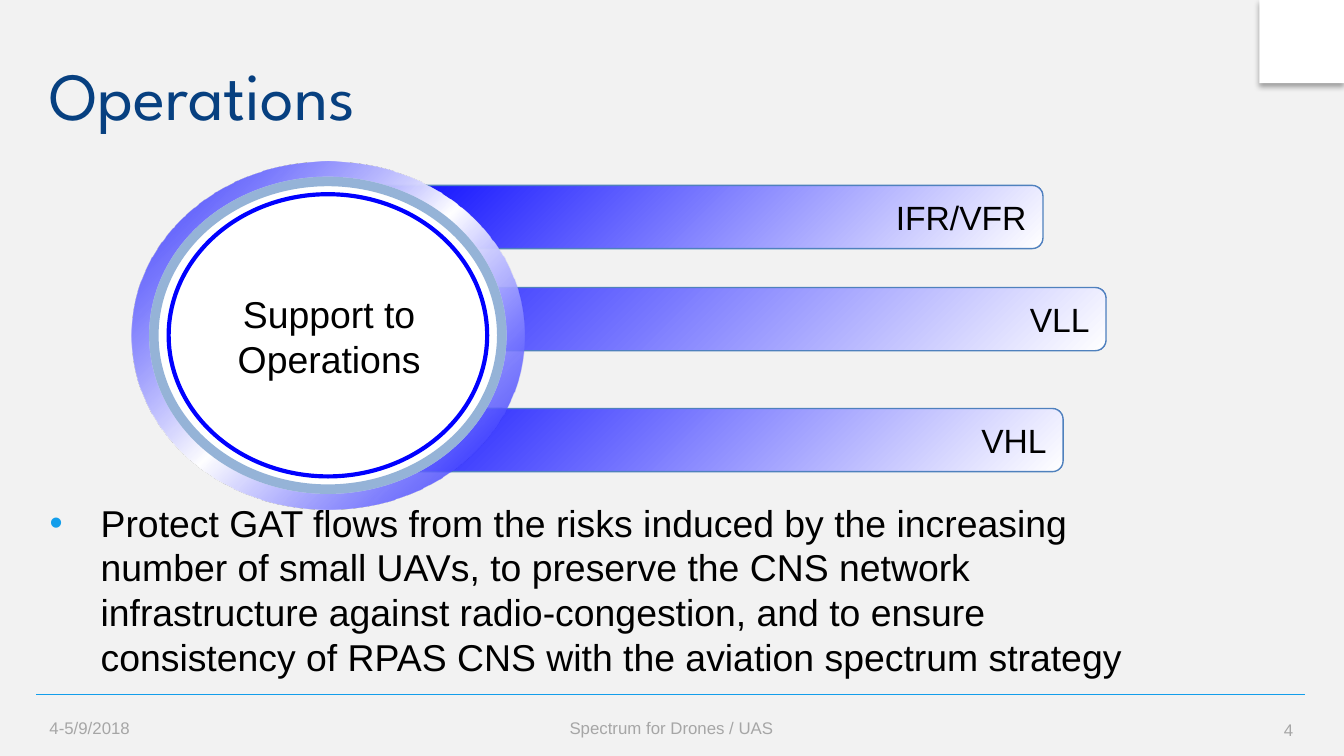
from lxml import etree
from pptx import Presentation
from pptx.dml.color import RGBColor
from pptx.enum.shapes import MSO_CONNECTOR as Connector, MSO_SHAPE as Shape
from pptx.enum.text import MSO_ANCHOR as Anchor, PP_ALIGN as Align
from pptx.oxml.ns import qn
from pptx.util import Inches, Pt

WIDTH = Inches(10)
HEIGHT = WIDTH * 9 // 16

BACKGROUND = RGBColor(0xF2, 0xF2, 0xF2)
WHITE = RGBColor(0xFF, 0xFF, 0xFF)
BLACK = RGBColor(0x00, 0x00, 0x00)
NAVY = RGBColor(0x07, 0x40, 0x80)
SKY = RGBColor(0x13, 0x9E, 0xEB)
GREY = RGBColor(0xA6, 0xA6, 0xA6)
BLUE = RGBColor(0x00, 0x00, 0xFF)
STEEL = RGBColor(0x4F, 0x81, 0xBD)

TITLE = {"size": Pt(36), "name": "League Spartan", "color": NAVY}
BODY = {"size": Pt(20), "name": "Arial", "color": BLACK}
BAR = {**BODY, "size": Pt(18)}
FOOTER = {**BODY, "size": Pt(9), "color": GREY}

CENTRE = (24.4, 44.36)
BAR_HEIGHT = 8.36
BARS = [  # label, left, top, width
    ("IFR/VFR", 26.4, 24.53, 51.2),
    ("VLL", 17.7, 38.04, 64.6),
    ("VHL", 22.4, 54.04, 56.7),
]


def place(left, top, width, height):
    """Turn percentages of the slide into lengths."""
    return [round(share * side / 100) for share, side in
            zip((left, top, width, height), (WIDTH, HEIGHT) * 2)]


def child(parent, tag, **attributes):
    element = etree.SubElement(parent, qn(tag))
    for name, value in attributes.items():
        element.set(name, str(value))
    return element


def add_color(parent, color, opacity=100):
    element = child(parent, "a:srgbClr", val=color)
    if opacity < 100:
        child(element, "a:alpha", val=opacity * 1000)


def set_gradient(shape, stops, angle=45):
    """Fill with stops of (position, colour, opacity)."""
    shape.fill.gradient()
    gradient = shape._element.spPr.find(qn("a:gradFill"))
    for element in list(gradient):
        gradient.remove(element)
    stop_list = child(gradient, "a:gsLst")
    for position, color, opacity in stops:
        add_color(child(stop_list, "a:gs", pos=position * 1000), color, opacity)
    child(gradient, "a:lin", ang=angle * 60000, scaled=0)


def write(shape, text, style, align=Align.LEFT, anchor=Anchor.MIDDLE,
          wrap=True, bullet=None):
    frame = shape.text_frame
    for name, value in {"word_wrap": wrap, "vertical_anchor": anchor}.items():
        setattr(frame, name, value)
    paragraph = frame.paragraphs[0]
    paragraph.alignment = align
    if bullet:
        indent = Inches(0.38)
        properties = paragraph._p.get_or_add_pPr()
        properties.set("marL", str(indent))
        properties.set("indent", str(-indent))
        add_color(child(properties, "a:buClr"), SKY)
        child(properties, "a:buFont", typeface="Arial")
        child(properties, "a:buChar", char=bullet)
    run = paragraph.add_run()
    run.text = text
    for name, value in style.items():
        if name == "color":
            run.font.color.rgb = value
        else:
            setattr(run.font, name, value)


def add_text(slide, box, text, style, **layout):
    write(slide.shapes.add_textbox(*place(*box)), text, style, **layout)


def add_shape(slide, kind, box, fill=None, line=None, line_width=0.75):
    shape = slide.shapes.add_shape(kind, *place(*box))
    shape.shadow.inherit = False
    if fill is not None:
        shape.fill.solid()
        shape.fill.fore_color.rgb = fill
    if line is None:
        shape.line.fill.background()
    else:
        shape.line.color.rgb = line
        shape.line.width = Pt(line_width)
    return shape


def add_disc(slide, kind, width, height, **format_values):
    """Add a round shape about the common centre."""
    box = (CENTRE[0] - width / 2, CENTRE[1] - height / 2, width, height)
    return add_shape(slide, kind, box, **format_values)


def add_corner_panel(slide):
    panel = add_shape(slide, Shape.RECTANGLE, (93.7, 0, 6.3, 11.02), WHITE)
    effects = panel._element.spPr.find(qn("a:effectLst"))
    shadow = child(effects, "a:outerShdw", blurRad=Pt(3.1), dist=Pt(1.8),
                   dir=90 * 60000, algn="t", rotWithShape=0)
    add_color(shadow, BLACK, 35)


def add_rule(slide):
    left, top, right, bottom = place(2.7, 91.91, 97.1, 91.91)
    rule = slide.shapes.add_connector(Connector.STRAIGHT, left, top, right, bottom)
    rule.line.color.rgb = SKY
    rule.line.width = Pt(0.75)
    child(rule._element.spPr, "a:effectLst")


def add_bar(slide, label, left, top, width):
    bar = add_shape(slide, Shape.ROUNDED_RECTANGLE,
                    (left, top, width, BAR_HEIGHT), line=STEEL)
    bar.adjustments[0] = 0.17
    set_gradient(bar, [(0, BLUE, 100), (100, WHITE, 100)])
    write(bar, label, BAR, align=Align.RIGHT, wrap=False)


def add_hub(slide):
    halo = add_disc(slide, Shape.DONUT, 29.2, 46.04)
    halo.adjustments[0] = 0.11
    set_gradient(halo, [(0, BLUE, 74), (50, WHITE, 100), (100, BLUE, 74)])
    add_disc(slide, Shape.OVAL, 26.6, 41.96, fill=WHITE)
    ring = add_disc(slide, Shape.DONUT, 26.6, 41.96, fill=STEEL)
    ring.adjustments[0] = 0.03
    add_color_opacity(ring, 60)
    add_disc(slide, Shape.OVAL, 23.7, 37.33, fill=WHITE, line=BLUE, line_width=2.25)
    add_text(slide, (13.8, 37.69, 21.4, 13.69), "Support to Operations", BODY,
             align=Align.CENTER, anchor=Anchor.TOP)


def add_color_opacity(shape, opacity):
    color = shape._element.spPr.find(qn("a:solidFill"))[0]
    child(color, "a:alpha", val=opacity * 1000)


def main():
    presentation = Presentation()
    presentation.slide_width, presentation.slide_height = WIDTH, HEIGHT
    slide = presentation.slides.add_slide(presentation.slide_layouts[6])
    slide.background.fill.solid()
    slide.background.fill.fore_color.rgb = BACKGROUND

    add_corner_panel(slide)
    add_rule(slide)
    add_text(slide, (2.7, 4.09, 86.8, 16.71), "Operations", TITLE)
    add_text(slide, (2.7, 65.24, 86.8, 24),
             "Protect GAT flows from the risks induced by the increasing number "
             "of small UAVs, to preserve the CNS network infrastructure against "
             "radio-congestion, and to ensure consistency of RPAS CNS with the "
             "aviation spectrum strategy",
             BODY, anchor=Anchor.TOP, bullet="•")
    add_text(slide, (2.7, 93.33, 10, 5.87), "4-5/9/2018", FOOTER)
    add_text(slide, (18.5, 93.33, 62.9, 5.87), "Spectrum for Drones / UAS", FOOTER,
             align=Align.CENTER)
    add_text(slide, (89.4, 93.87, 7.8, 5.33), "4", FOOTER, align=Align.RIGHT)
    for bar in BARS:
        add_bar(slide, *bar)
    add_hub(slide)
    presentation.save("out.pptx")


if __name__ == "__main__":
    main()
